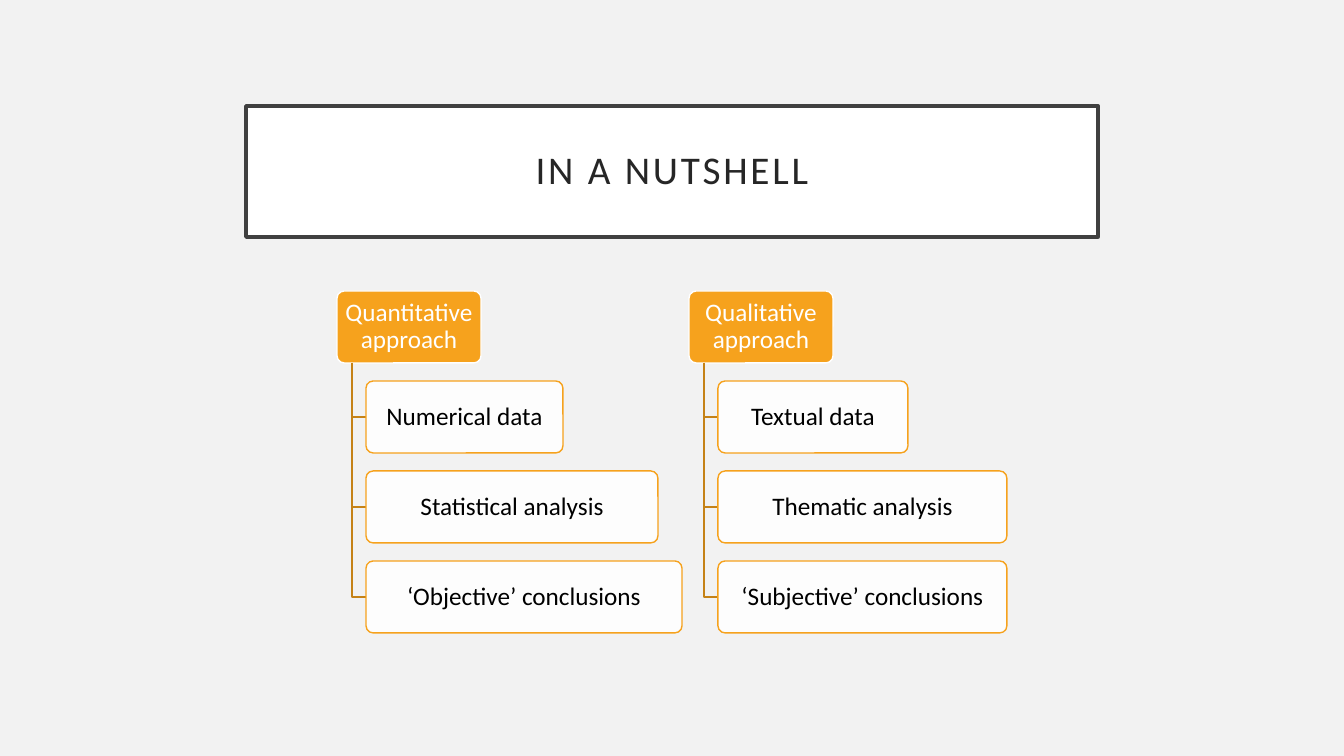
from lxml import etree
from pptx import Presentation
from pptx.dml.color import RGBColor
from pptx.enum.shapes import MSO_SHAPE
from pptx.enum.text import MSO_ANCHOR, PP_ALIGN
from pptx.oxml.ns import qn
from pptx.util import Pt

ROUND = MSO_SHAPE.ROUNDED_RECTANGLE
MIDDLE = MSO_ANCHOR.MIDDLE
CENTER = PP_ALIGN.CENTER
SCALE = 914400 / 100.8
FONT = "Calibri"
ORANGE, WHITE = "F6A21D", "FFFFFF"
ROW, PITCH, STEM, INDENT = 72, 90, 15, 29

TREES = [
    (337, "Quantitative approach", [
        ("Numerical data", 197),
        ("Statistical analysis", 292),
        ("‘Objective’ conclusions", 316),
    ]),
    (689, "Qualitative approach", [
        ("Textual data", 190),
        ("Thematic analysis", 289),
        ("‘Subjective’ conclusions", 289),
    ]),
]


def px(n):
    return round(n * SCALE)


def tint(code):
    return RGBColor.from_string(code)


def paint(shape, fill, line, width):
    shape.fill.solid()
    shape.fill.fore_color.rgb = tint(fill)
    shape.line.color.rgb = tint(line)
    shape.line.width = Pt(width)


def write(shape, text, size, color, side, top):
    frame = shape.text_frame
    frame.text = text
    frame.word_wrap = True
    frame.vertical_anchor = MIDDLE
    frame.margin_left = frame.margin_right = px(side)
    frame.margin_top = frame.margin_bottom = px(top)
    para = frame.paragraphs[0]
    para.alignment = CENTER
    para.line_spacing = 0.9
    run = para.runs[0]
    run.font.name = FONT
    run.font.size = Pt(size)
    run.font.color.rgb = tint(color)
    return run


def add_title(slide, x, y, w, h):
    title = slide.shapes.title
    title.left, title.top, title.width, title.height = map(px, (x, y, w, h))
    paint(title, WHITE, "404040", 2.5)
    run = write(title, "IN A NUTSHELL", 28, "262626", 20, 20)
    run._r.get_or_add_rPr().set("spc", "200")


def add_card(slide, x, y, w, text, fill, line, color):
    card = slide.shapes.add_shape(ROUND, px(x), px(y), px(w), px(ROW))
    card.adjustments[0] = 0.1
    card.shadow.inherit = False
    paint(card, fill, line, 1)
    write(card, text, 18, color, 6, 5)
    return card


def add_elbow(slide, x, y, w, h):
    pen = slide.shapes.build_freeform(px(x), px(y))
    pen.add_line_segments([(px(x), px(y + h)), (px(x + w), px(y + h))], close=False)
    elbow = pen.convert_to_shape()
    elbow.shadow.inherit = False
    elbow.fill.background()
    elbow.line.color.rgb = tint("C58217")
    elbow.line.width = Pt(1)


def add_tree(slide, x, y, head, leaves):
    add_card(slide, x, y, 144, head, ORANGE, WHITE, WHITE)
    for i, (text, w) in enumerate(leaves, 1):
        base = y + ROW
        top = y + i * PITCH
        add_elbow(slide, x + STEM, base, INDENT - STEM, top + ROW // 2 - base)
        leaf = add_card(slide, x + INDENT, top, w, text, WHITE, ORANGE, "000000")
        color = leaf._element.spPr.find(qn("a:solidFill"))[0]
        etree.SubElement(color, qn("a:alpha")).set("val", "90000")


def main():
    deck = Presentation()
    deck.slide_width, deck.slide_height = px(1344), px(756)
    slide = deck.slides.add_slide(deck.slide_layouts.get_by_name("Title Only"))
    slide.background.fill.solid()
    slide.background.fill.fore_color.rgb = tint("F2F2F2")
    add_title(slide, 246, 106, 852, 131)
    for x, head, leaves in TREES:
        add_tree(slide, x, 291, head, leaves)
    deck.save("out.pptx")


if __name__ == "__main__":
    main()
